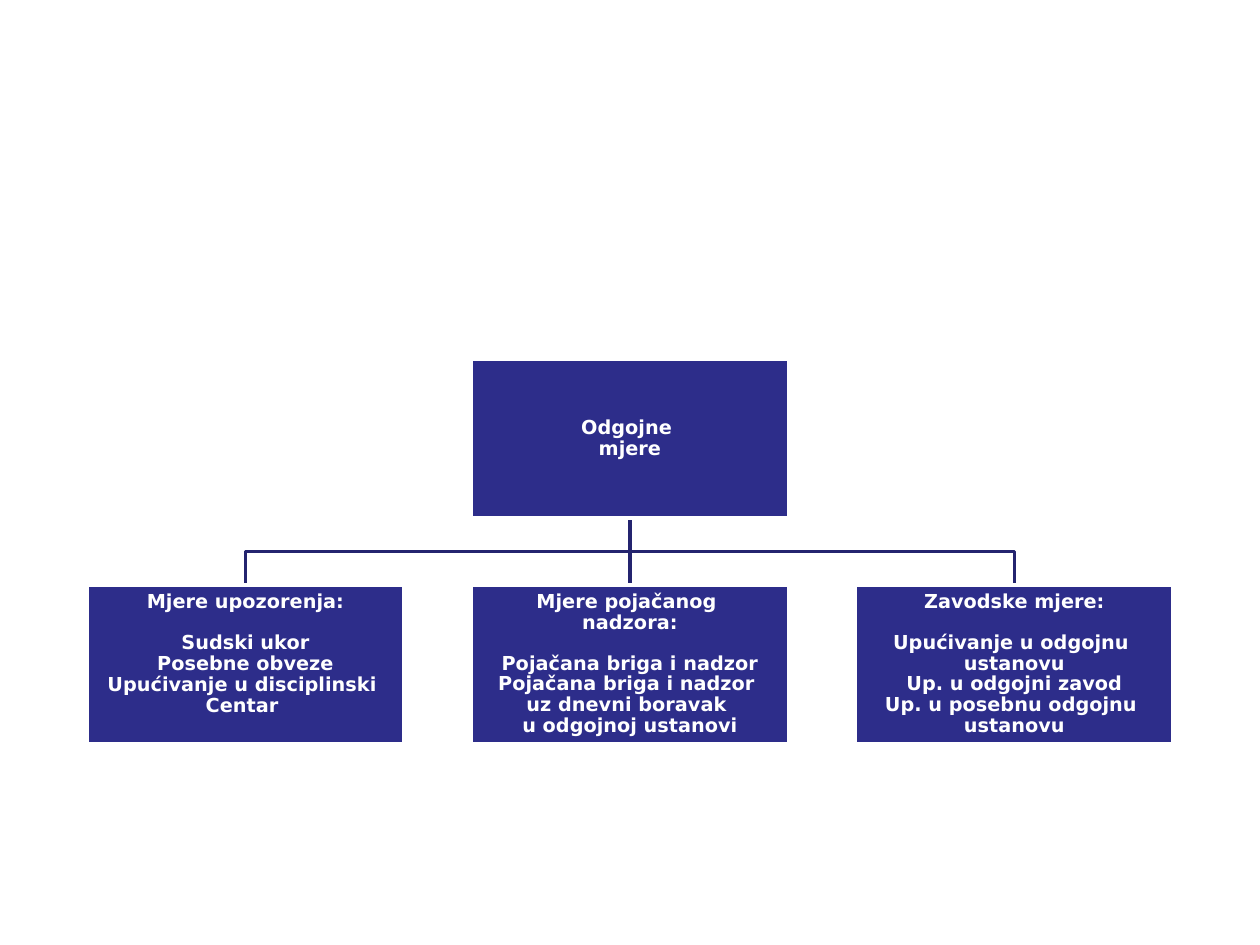
from lxml import etree
from pptx import Presentation
from pptx.dml.color import RGBColor
from pptx.enum.shapes import MSO_CONNECTOR, MSO_SHAPE
from pptx.enum.text import MSO_ANCHOR, PP_ALIGN
from pptx.oxml.ns import qn
from pptx.util import Cm, Pt

RECTANGLE = MSO_SHAPE.RECTANGLE
STRAIGHT = MSO_CONNECTOR.STRAIGHT
MIDDLE = MSO_ANCHOR.MIDDLE
CENTER = PP_ALIGN.CENTER
NAVY = RGBColor(0x2D, 0x2D, 0x8A)
DARK_NAVY = RGBColor(0x24, 0x24, 0x6F)
WHITE = RGBColor(0xFF, 0xFF, 0xFF)
BOX_WIDTH, BOX_HEIGHT = Cm(6.4), Cm(3.2)
COLUMN_PITCH, ROW_PITCH = Cm(7.75), Cm(4.55)
INSET = Cm(0.03)
LINE_HEIGHT = Pt(11.5)
FULL_LINES = 6

ROOT = ["Odgojne ", "mjere"]
MEASURES = [
    (["Mjere upozorenja:"],
     ["Sudski ukor", "Posebne obveze", "Upućivanje u disciplinski ", "Centar "]),
    (["Mjere pojačanog ", "nadzora:"],
     ["Pojačana briga i nadzor", "Pojačana briga i nadzor ",
      "uz dnevni boravak ", "u odgojnoj ustanovi"]),
    (["Zavodske mjere:"],
     ["Upućivanje u odgojnu ", "ustanovu", "Up. u odgojni zavod",
      "Up. u posebnu odgojnu ", "ustanovu"]),
]


def add_box(page, left, top, heading, items=()):
    """Draw a filled box with a heading, a gap and its items."""
    box = page.shapes.add_shape(RECTANGLE, left, top, BOX_WIDTH, BOX_HEIGHT)
    box.shadow.inherit = False
    box.fill.solid()
    box.fill.fore_color.rgb = NAVY
    style_line(box.line, WHITE)
    frame = box.text_frame
    frame.word_wrap = True
    frame.vertical_anchor = MIDDLE
    frame.margin_left = frame.margin_right = INSET
    frame.margin_top = frame.margin_bottom = INSET
    lines = [*heading, *items]
    if items:
        frame.margin_bottom = INSET + (FULL_LINES - len(lines)) * LINE_HEIGHT
    for index, line in enumerate(lines):
        para = frame.paragraphs[0] if index == 0 else frame.add_paragraph()
        para.text = line
        para.alignment = CENTER
        para.line_spacing = 0.9
        para.font.name = "DejaVu Sans"
        para.font.size = Pt(11)
        para.font.bold = True
        para.font.color.rgb = WHITE
        if items and index == len(heading):
            para.space_before = LINE_HEIGHT
    return box


def style_line(line, color):
    """Give a line its colour and the common width."""
    line.color.rgb = color
    line.width = Pt(2)


def add_branch(page, start_x, start_y, end_x, end_y):
    """Draw an elbow that goes down, across and down again."""
    middle_y = (start_y + end_y) // 2
    builder = page.shapes.build_freeform(start_x, start_y)
    builder.add_line_segments(
        [(start_x, middle_y), (end_x, middle_y), (end_x, end_y)], close=False)
    branch = builder.convert_to_shape()
    branch.shadow.inherit = False
    branch.fill.background()
    style_line(branch.line, DARK_NAVY)


def add_stem(page, parent, child):
    """Join two boxes with a straight connector behind them."""
    stem = page.shapes.add_connector(STRAIGHT, 0, 0, 0, 0)
    stem.begin_connect(parent, 2)
    stem.end_connect(child, 0)
    style_line(stem.line, DARK_NAVY)
    properties = stem._element.spPr
    etree.SubElement(properties, qn("a:effectLst"))
    parent._element.addprevious(stem._element)


def add_chart_tree(page, center_x, top):
    """Draw the tree of measures below a centred root box."""
    root_left = center_x - BOX_WIDTH // 2
    child_top = top + ROW_PITCH
    for side in (1, -1):
        add_branch(page, center_x, top + BOX_HEIGHT,
                   center_x + side * COLUMN_PITCH, child_top)
    root = add_box(page, root_left, top, ROOT)
    children = [
        add_box(page, root_left + (column - 1) * COLUMN_PITCH, child_top,
                heading, items)
        for column, (heading, items) in enumerate(MEASURES)
    ]
    add_stem(page, root, children[1])


def main():
    """Build the deck and save it."""
    deck = Presentation()
    deck.slide_width, deck.slide_height = Cm(25.4), Cm(19.05)
    page = deck.slides.add_slide(deck.slide_layouts[6])
    add_chart_tree(page, deck.slide_width // 2, Cm(7.24))
    deck.save("out.pptx")


if __name__ == "__main__":
    main()
